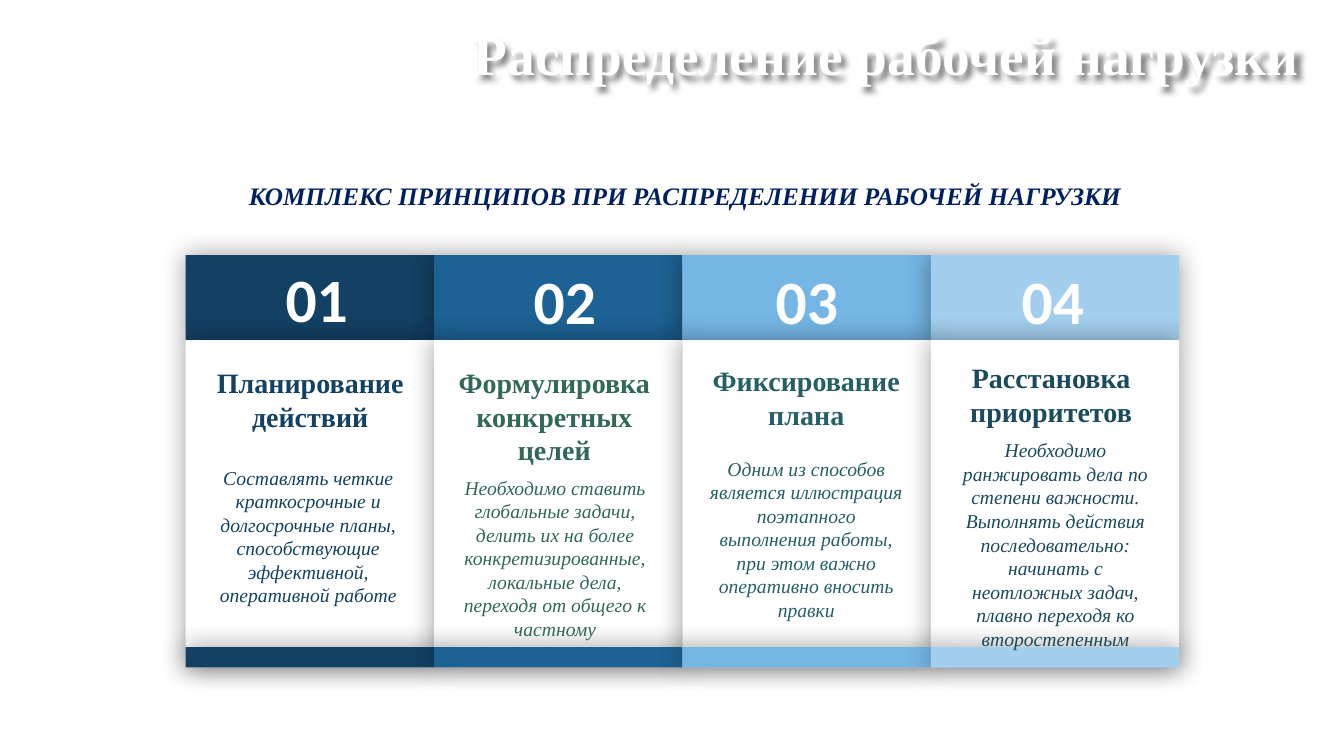
import pptx
import pptx.util
import pptx.dml.color
import pptx.enum.shapes
import pptx.enum.text
import pptx.oxml
import pptx.oxml.ns

Cm = pptx.util.Cm
Pt = pptx.util.Pt
ALIGN = pptx.enum.text.PP_ALIGN
SERIF = "Times New Roman"

TITLE = "Распределение рабочей нагрузки"
LEAD = "КОМПЛЕКС ПРИНЦИПОВ ПРИ РАСПРЕДЕЛЕНИИ РАБОЧЕЙ НАГРУЗКИ"

# band colour, text colour, heading, body,
# then (left, top, width, height) of the number, heading and body in cm
CARDS = [
    ("134163", "134163", "Планирование действий",
     "Составлять четкие краткосрочные и долгосрочные планы, "
     "способствующие эффективной, оперативной работе",
     (6.93, 6.45, 2.11, 2.13), (5.13, 9.09, 5.38, 1.96),
     (5.08, 11.61, 5.38, 3.84)),
    ("1D6294", "316857", "Формулировка конкретных целей",
     "Необходимо ставить глобальные задачи, делить их на более "
     "конкретизированные, локальные дела, переходя от общего к частному",
     (13.18, 6.5, 2.11, 2.13), (11.28, 9.09, 5.38, 2.82),
     (11.3, 11.86, 5.38, 4.45)),
    ("75B6E5", "266066", "Фиксирование плана",
     "Одним из способов является иллюстрация поэтапного выполнения "
     "работы, при этом важно оперативно вносить правки",
     (19.28, 6.5, 2.11, 2.13), (17.63, 9.04, 5.38, 1.96),
     (17.63, 11.38, 5.38, 4.45)),
    ("A3CEED", "1A4A5D", "Расстановка приоритетов",
     "Необходимо ранжировать дела по степени важности. Выполнять действия "
     "последовательно: начинать с неотложных задач, плавно переходя ко "
     "второстепенным",
     (25.48, 6.5, 2.11, 2.13), (23.8, 8.97, 5.38, 1.96),
     (23.77, 10.92, 5.66, 5.64)),
]
LEFT, STEP = 4.68, 6.26
ROWS = [(6.43, 2.14), (8.57, 8.25), (16.31, 0.51)]  # top, height


def tint(hue):
    return pptx.dml.color.RGBColor.from_string(hue)


def shade(shape, blur, dist=0, angle=0, alpha=40):
    """Give the shape a soft black shadow; blur and dist in points."""
    shape.shadow.inherit = False
    glow = pptx.oxml.parse_xml(
        f'<a:outerShdw {pptx.oxml.ns.nsdecls("a")} blurRad="{Pt(blur)}" '
        f'dist="{Pt(dist)}" dir="{angle * 60000}" algn="ctr" rotWithShape="0">'
        f'<a:srgbClr val="000000"><a:alpha val="{alpha * 1000}"/></a:srgbClr>'
        '</a:outerShdw>')
    shape._element.spPr.find(pptx.oxml.ns.qn("a:effectLst")).append(glow)


def write(frame, text, size, hue, face=SERIF, bold=False, slant=False,
          align=ALIGN.CENTER):
    frame.text = text
    para = frame.paragraphs[0]
    para.alignment = align
    font = para.font
    font.name, font.size = face, Pt(size)
    font.bold, font.italic = bold, slant
    font.color.rgb = tint(hue)
    return para


def label(slide, box, text, size, hue, wrap=True, **style):
    frame = slide.shapes.add_textbox(*map(Cm, box)).text_frame
    frame.word_wrap = wrap
    frame.auto_size = pptx.enum.text.MSO_AUTO_SIZE.SHAPE_TO_FIT_TEXT
    write(frame, text, size, hue, **style)


def panel(slide, box, hue):
    shape = slide.shapes.add_shape(
        pptx.enum.shapes.MSO_SHAPE.RECTANGLE, *map(Cm, box))
    shape.fill.solid()
    shape.fill.fore_color.rgb = tint(hue)
    shape.line.fill.background()
    shade(shape, 19)


def head(slide):
    title = slide.shapes.title
    title.left, title.top = Cm(11.68), Cm(0)
    title.width, title.height = Cm(22.19), Cm(2.9)
    frame = title.text_frame
    frame.word_wrap = True
    frame.auto_size = pptx.enum.text.MSO_AUTO_SIZE.NONE
    frame.vertical_anchor = pptx.enum.text.MSO_ANCHOR.MIDDLE
    para = write(frame, TITLE, 39.6, "FFFFFF", bold=True, align=ALIGN.LEFT)
    para.line_spacing = 0.9
    shade(title, 4, 4, 45, 50)


def main():
    deck = pptx.Presentation()
    deck.slide_width, deck.slide_height = Cm(33.87), Cm(19.05)
    slide = deck.slides.add_slide(deck.slide_layouts[5])
    head(slide)
    for row, (top, high) in enumerate(ROWS):
        for col, card in enumerate(CARDS):
            hue = "FFFFFF" if row == 1 else card[0]
            panel(slide, (LEFT + col * STEP, top, STEP, high), hue)
    for num, card in enumerate(CARDS, 1):
        _, hue, name, body, spot, upper, lower = card
        label(slide, spot, f"{num:02}", 44, "FFFFFF", wrap=False,
              face="Calibri", bold=True)
        label(slide, upper, name, 20, hue, bold=True)
        label(slide, lower, body, 14, hue, slant=True)
    label(slide, (4.8, 4.42, 24.94, 1.02), LEAD, 18, "002060",
          bold=True, slant=True)
    deck.save("out.pptx")


if __name__ == "__main__":
    main()
